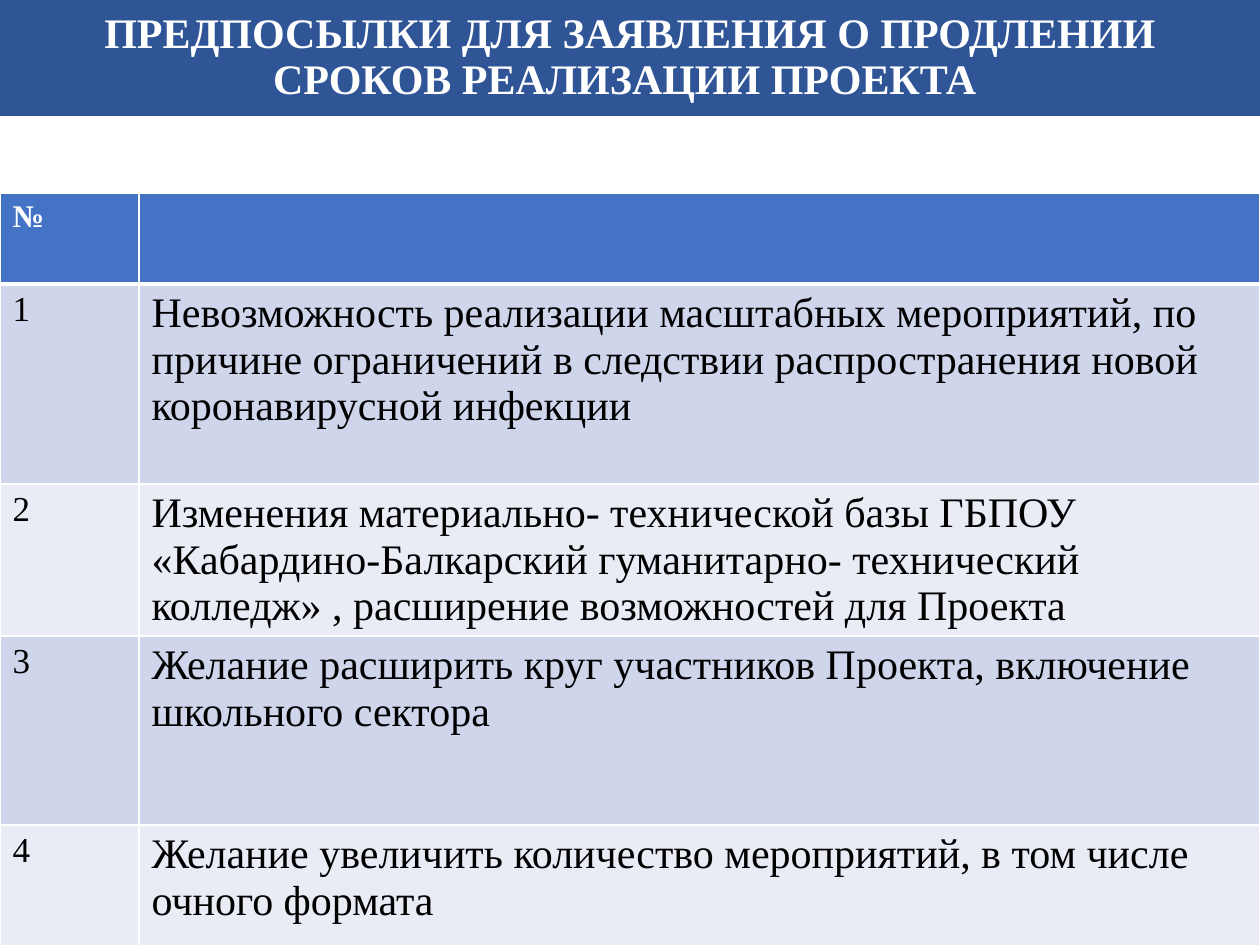
from dataclasses import dataclass

from lxml.etree import SubElement
from pptx import Presentation
from pptx.dml.color import RGBColor as RGB
from pptx.enum.text import MSO_ANCHOR as Anchor, MSO_AUTO_SIZE as AutoSize, PP_ALIGN as Align
from pptx.oxml.ns import qn
from pptx.util import Emu, Pt

EMU_PER_PX = 914400 / 126
SLIDE_W, SLIDE_H = 1260, 945
TITLE_H = 116
TABLE_TOP = 193
COL_WIDTHS = (139, 1121)
ROW_HEIGHTS = (91, 200, 136, 189, 131)

TITLE = "ПРЕДПОСЫЛКИ ДЛЯ ЗАЯВЛЕНИЯ О ПРОДЛЕНИИ СРОКОВ РЕАЛИЗАЦИИ ПРОЕКТА "
REASONS = (
    "Невозможность реализации масштабных мероприятий, по причине "
    "ограничений в следствии распространения новой коронавирусной инфекции",
    "Изменения материально- технической базы ГБПОУ «Кабардино-Балкарский "
    "гуманитарно- технический колледж» , расширение возможностей для Проекта",
    "Желание расширить круг участников Проекта, включение школьного сектора",
    "Желание увеличить количество мероприятий, в том числе очного формата",
)


@dataclass(frozen=True)
class Theme:
    font: str = "Times New Roman"
    banner: str = "2F5597"
    header: str = "4472C4"
    bands: tuple = ("CFD5EA", "E9EBF5")
    light: str = "FFFFFF"
    dark: str = "000000"
    title_size: int = 24
    header_size: int = 18
    number_size: int = 20
    reason_size: int = 24
    line: int = 1
    header_line: int = 3


THEME = Theme()


def px(n):
    return Emu(round(n * EMU_PER_PX))


def set_fill(target, color):
    target.fill.solid()
    target.fill.fore_color.rgb = RGB.from_string(color)


def set_text(tf, text, size, color, bold=False):
    tf.text = text
    for r in tf.paragraphs[0].runs:
        r.font.name = THEME.font
        r.font.size = Pt(size)
        r.font.bold = bold
        r.font.color.rgb = RGB.from_string(color)


def set_borders(cell, top, bottom):
    tc_pr = cell._tc.get_or_add_tcPr()
    widths = {"lnL": THEME.line, "lnR": THEME.line, "lnT": top, "lnB": bottom}
    for side, width in widths.items():
        ln = SubElement(tc_pr, qn(f"a:{side}"), w=str(Pt(width)))
        fill = SubElement(ln, qn("a:solidFill"))
        SubElement(fill, qn("a:srgbClr"), val=THEME.light)


def add_title(s):
    sp = s.shapes.title
    sp.left, sp.top, sp.width, sp.height = px(0), px(0), px(SLIDE_W), px(TITLE_H)
    set_fill(sp, THEME.banner)
    tf = sp.text_frame
    set_text(tf, TITLE, THEME.title_size, THEME.light, bold=True)
    tf.word_wrap = True
    tf.auto_size = AutoSize.NONE
    tf.vertical_anchor = Anchor.MIDDLE
    p = tf.paragraphs[0]
    p.alignment = Align.CENTER
    p.line_spacing = 0.9


def add_cell(cell, row, text, size):
    is_header = row == 0
    top = THEME.header_line if row == 1 else THEME.line
    bottom = THEME.header_line if is_header else THEME.line
    set_borders(cell, top, bottom)
    set_fill(cell, THEME.header if is_header else THEME.bands[(row - 1) % 2])
    color = THEME.light if is_header else THEME.dark
    set_text(cell.text_frame, text, size, color, bold=is_header)


def add_reasons_table(s):
    rows = [("№", "")] + [(str(i), text) for i, text in enumerate(REASONS, 1)]
    table = s.shapes.add_table(
        len(rows), len(COL_WIDTHS),
        px(0), px(TABLE_TOP), px(SLIDE_W), px(sum(ROW_HEIGHTS)),
    ).table
    for col, width in zip(table.columns, COL_WIDTHS):
        col.width = px(width)
    for i, (texts, height) in enumerate(zip(rows, ROW_HEIGHTS)):
        table.rows[i].height = px(height)
        sizes = (THEME.number_size, THEME.reason_size) if i else (THEME.header_size,) * 2
        for j, (text, size) in enumerate(zip(texts, sizes)):
            add_cell(table.cell(i, j), i, text, size)


def main():
    prs = Presentation()
    prs.slide_width, prs.slide_height = px(SLIDE_W), px(SLIDE_H)
    s = prs.slides.add_slide(prs.slide_layouts.get_by_name("Title Only"))
    add_title(s)
    add_reasons_table(s)
    prs.save("out.pptx")


if __name__ == "__main__":
    main()
